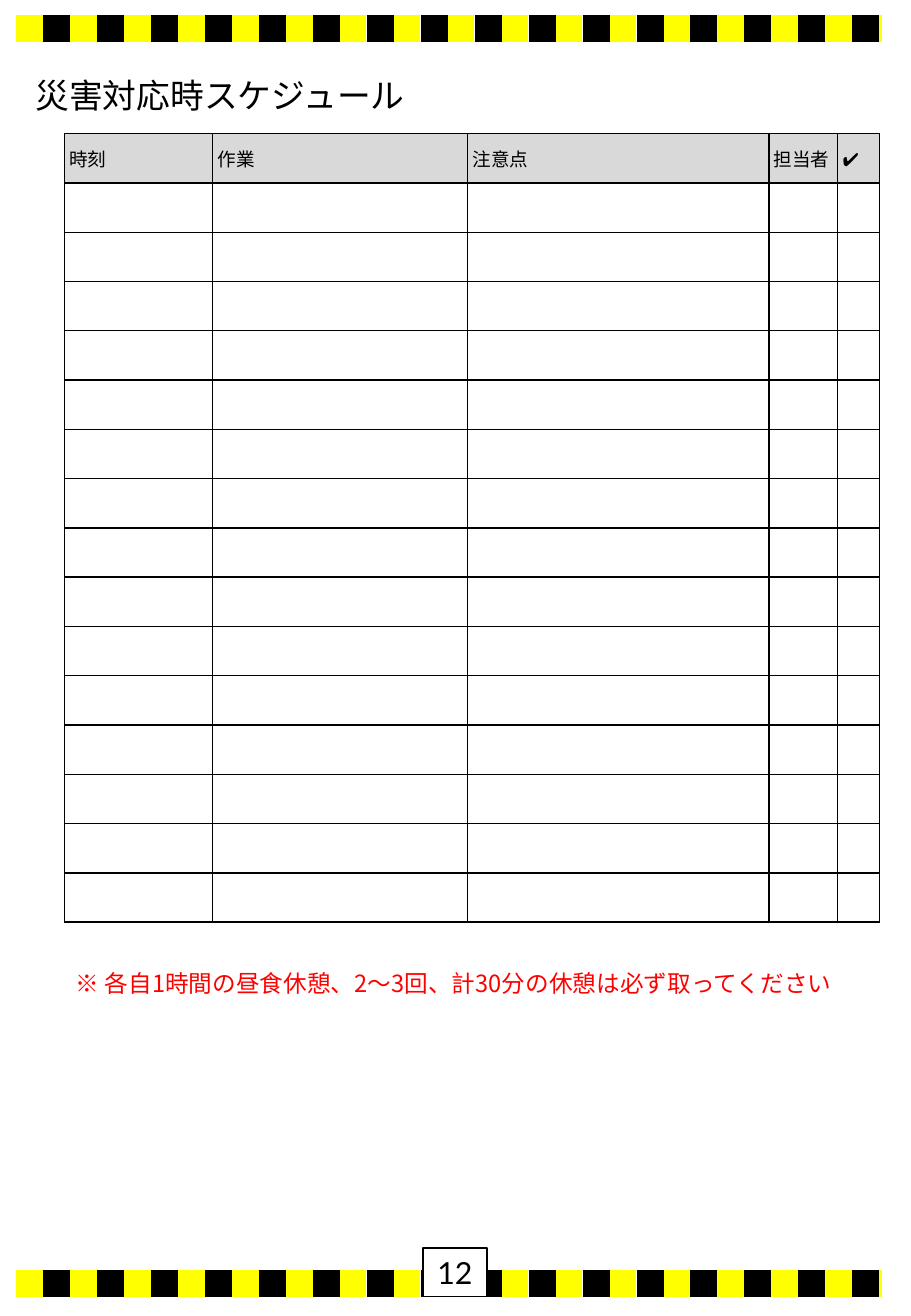
from lxml.etree import SubElement
from pptx import Presentation
from pptx.dml.color import RGBColor
from pptx.enum.dml import MSO_LINE
from pptx.enum.shapes import MSO_CONNECTOR, MSO_SHAPE
from pptx.enum.text import MSO_ANCHOR, PP_ALIGN
from pptx.oxml.ns import qn
from pptx.util import Pt

BLACK = RGBColor(0x00, 0x00, 0x00)
WHITE = RGBColor(0xFF, 0xFF, 0xFF)
YELLOW = RGBColor(0xFF, 0xFF, 0x00)
RED = RGBColor(0xFF, 0x00, 0x00)
HEADER_GREY = RGBColor(0xD9, 0xD9, 0xD9)
JAPANESE = "Noto Sans CJK JP"
LATIN = "Lato"

HEADINGS = ["時刻", "作業", "注意点", "担当者", "✔️"]
COLUMN_WIDTHS = [87.8, 151.2, 178.6, 40.8, 24.9]
SCHEDULE_ROWS = 15
ROW_HEIGHT = 29.2


class SchedulePage:
    def __init__(self, slide):
        self.slide = slide

    def set_text(self, frame, text, size, color=BLACK, font=JAPANESE, spacing=None):
        frame.text = text
        frame.word_wrap = True
        paragraph = frame.paragraphs[0]
        paragraph.alignment = PP_ALIGN.LEFT
        if spacing:
            paragraph.line_spacing = Pt(spacing)
        for run in paragraph.runs:
            run.font.size = Pt(size)
            run.font.name = font
            run.font.color.rgb = color
            SubElement(run.font._element, qn("a:ea"), typeface=font)

    def stripe(self, left, right, y, color):
        stripe = self.slide.shapes.add_connector(
            MSO_CONNECTOR.STRAIGHT, Pt(left), Pt(y), Pt(right), Pt(y))
        stripe.line.color.rgb = color
        stripe.line.width = Pt(16)
        stripe.line.dash_style = MSO_LINE.ROUND_DOT
        SubElement(stripe._element.spPr, qn("a:effectLst"))

    def hazard_band(self, y):
        self.stripe(9.4, 522.7, y, YELLOW)
        self.stripe(25.6, 524.9, y, BLACK)

    def title(self, text, left, top, width, height):
        title = self.slide.shapes.title
        title.left, title.top = Pt(left), Pt(top)
        title.width, title.height = Pt(width), Pt(height)
        title.text_frame.vertical_anchor = MSO_ANCHOR.MIDDLE
        self.set_text(title.text_frame, text, 20)

    def note(self, text, left, top, width, height):
        note = self.slide.shapes.add_textbox(Pt(left), Pt(top), Pt(width), Pt(height))
        self.set_text(note.text_frame, text, 14, RED, spacing=16.6)

    def page_number(self, text, left, top, width, height):
        plate = self.slide.shapes.add_shape(
            MSO_SHAPE.RECTANGLE, Pt(left), Pt(top), Pt(width), Pt(height))
        plate.shadow.inherit = False
        plate.fill.solid()
        plate.fill.fore_color.rgb = WHITE
        plate.line.color.rgb = BLACK
        plate.line.width = Pt(1)
        plate.text_frame.vertical_anchor = MSO_ANCHOR.MIDDLE
        self.set_text(plate.text_frame, text, 18, font=LATIN)
        plate.text_frame.paragraphs[0].alignment = PP_ALIGN.CENTER

    def border(self, cell):
        properties = cell._tc.get_or_add_tcPr()
        for side in ("lnL", "lnR", "lnT", "lnB"):
            edge = SubElement(properties, qn(f"a:{side}"), w=str(Pt(1)))
            fill = SubElement(edge, qn("a:solidFill"))
            SubElement(fill, qn("a:srgbClr"), val=str(BLACK))

    def schedule(self, left, top):
        table = self.slide.shapes.add_table(
            SCHEDULE_ROWS + 1, len(HEADINGS), Pt(left), Pt(top),
            Pt(sum(COLUMN_WIDTHS)), Pt(ROW_HEIGHT * (SCHEDULE_ROWS + 1))).table
        table.first_row = table.horz_banding = False
        for column, width in zip(table.columns, COLUMN_WIDTHS):
            column.width = Pt(width)
        for row in table.rows:
            row.height = Pt(ROW_HEIGHT)
        for cell in table.iter_cells():
            cell.margin_left = cell.margin_right = Pt(2.9)
            cell.margin_top = cell.margin_bottom = Pt(2.9)
            cell.vertical_anchor = MSO_ANCHOR.MIDDLE
            self.border(cell)
            cell.fill.background()
        for cell, heading in zip(table.rows[0].cells, HEADINGS):
            cell.fill.solid()
            cell.fill.fore_color.rgb = HEADER_GREY
            self.set_text(cell.text_frame, heading, 11)


def main():
    presentation = Presentation()
    presentation.slide_width = Pt(540)
    presentation.slide_height = Pt(779.76)
    page = SchedulePage(presentation.slides.add_slide(presentation.slide_layouts[5]))
    page.hazard_band(760.3)
    page.hazard_band(17.1)
    page.title("災害対応時スケジュール", 13.7, 40.3, 408.2, 31.7)
    page.schedule(38.2, 79.2)
    page.page_number("12", 250.6, 739.4, 38.2, 28.8)
    page.note("※ 各自1時間の昼食休憩、2〜3回、計30分の休憩は必ず取ってください",
              37.8, 571, 465.1, 24.5)
    presentation.save("out.pptx")


if __name__ == "__main__":
    main()
